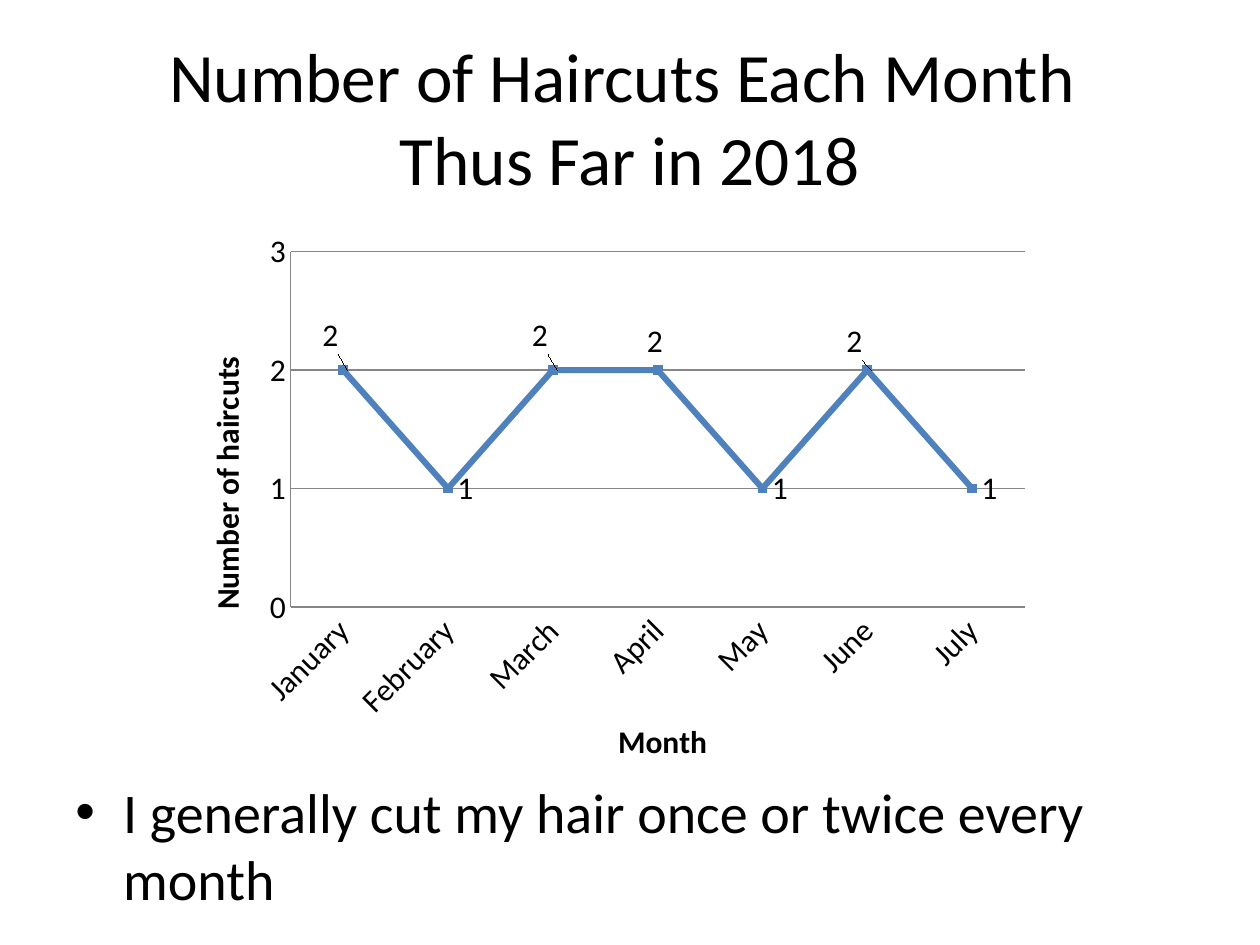
from pptx import Presentation
from pptx.chart.data import CategoryChartData
from pptx.dml.color import RGBColor
from pptx.enum.chart import XL_CHART_TYPE as ChartType, XL_LABEL_POSITION as LabelPos
from pptx.enum.chart import XL_MARKER_STYLE as Marker, XL_TICK_MARK as Tick
from pptx.enum.text import MSO_ANCHOR as Anchor, PP_ALIGN as Align
from pptx.oxml import parse_xml
from pptx.oxml.ns import nsdecls, qn
from pptx.util import Inches, Pt

FONT = "Calibri"
HAIRCUTS = {"January": 2, "February": 1, "March": 2, "April": 2,
            "May": 1, "June": 2, "July": 1}
LABEL_SHIFTS = {0: (-0.03, -0.06), 2: (-0.03, -0.06),
                3: (-0.02, -0.05), 5: (-0.03, -0.05)}


def color(value):
    """Turn a hex string into a colour."""
    return RGBColor.from_string(value)


def style_font(font, size, bold=False):
    """Give a font the typeface, size and weight of this slide."""
    font.name, font.size, font.bold = FONT, Pt(size), bold
    font.color.rgb = color("000000")


def add_text(page, box, text, size, align=Align.LEFT, anchor=Anchor.TOP, bullet=None):
    """Add a wrapped text box, optionally with a hanging bullet."""
    frame = page.shapes.add_textbox(*map(Inches, box)).text_frame
    frame.word_wrap, frame.vertical_anchor = True, anchor
    para = frame.paragraphs[0]
    para.text, para.alignment = text, align
    for span in para.runs:
        style_font(span.font, size)
    if bullet:
        props = para._p.get_or_add_pPr()
        props.set("marL", str(Inches(0.38)))
        props.set("indent", str(-Inches(0.38)))
        props.append(parse_xml(f'<a:buFont {nsdecls("a")} typeface="Arial"/>'))
        props.append(parse_xml(f'<a:buChar {nsdecls("a")} char="{bullet}"/>'))


def set_layout(parent, after, modes="", **values):
    """Place a chart part by fractions of the chart's size."""
    for old in parent.findall(qn("c:layout")):
        parent.remove(old)
    sizes = "".join(f'<c:{key} val="{value}"/>' for key, value in values.items())
    layout = parse_xml(f'<c:layout {nsdecls("c")}><c:manualLayout>{modes}{sizes}'
                       '</c:manualLayout></c:layout>')
    if after is None:
        parent.insert(0, layout)
    else:
        after.addnext(layout)


def style_axis(axis, title, left, top, rotation=0):
    """Format an axis and place its title."""
    axis.major_tick_mark = axis.minor_tick_mark = Tick.NONE
    axis.format.line.color.rgb = color("868686")
    style_font(axis.tick_labels.font, 18)
    frame = axis.axis_title.text_frame
    frame.text = title
    style_font(frame.paragraphs[0].runs[0].font, 18, bold=True)
    frame._txBody.find(qn("a:bodyPr")).set("rot", str(rotation * 60000))
    element = axis.axis_title._element
    set_layout(element, element.find(qn("c:tx")),
               '<c:xMode val="edge"/><c:yMode val="edge"/>', x=left, y=top)


def style_series(series):
    """Format the line, its markers and its value labels."""
    series.smooth = False
    blue = color("4F81BD")
    series.format.line.color.rgb, series.format.line.width = blue, Pt(3.5)
    series.marker.style, series.marker.size = Marker.SQUARE, 5
    series.marker.format.fill.solid()
    series.marker.format.fill.fore_color.rgb = blue
    series.marker.format.line.color.rgb = blue
    labels = series.data_labels
    labels.show_value, labels.position = True, LabelPos.RIGHT
    style_font(labels.font, 18)
    for index in LABEL_SHIFTS:
        series.points[index].data_label.position = LabelPos.RIGHT
    for label in series._element.iter(qn("c:dLbl")):
        mark = label.find(qn("c:idx"))
        left, top = LABEL_SHIFTS[int(mark.get("val"))]
        set_layout(label, mark, x=left, y=top)


def add_haircut_chart(page, box):
    """Add the line chart of haircuts by month."""
    data = CategoryChartData()
    data.categories = list(HAIRCUTS)
    data.add_series("Series 1", list(HAIRCUTS.values()))
    chart = page.shapes.add_chart(ChartType.LINE_MARKERS, *map(Inches, box), data).chart
    chart.has_legend = chart.has_title = False
    style_font(chart.font, 18)
    chart.plots[0].vary_by_categories = False
    style_axis(chart.category_axis, "Month", 0.42, 0.9)
    chart.category_axis.tick_labels.font._element.getparent().getparent().getparent().find(
        qn("a:bodyPr")).set("rot", str(-45 * 60000))
    values = chart.value_axis
    style_axis(values, "Number of haircuts", 0.01, 0.27, rotation=-90)
    values.minimum_scale, values.maximum_scale, values.major_unit = 0, 3, 1
    values.major_gridlines.format.line.color.rgb = color("868686")
    style_series(chart.plots[0].series[0])
    set_layout(chart._chartSpace.chart.plotArea, None,
               '<c:layoutTarget val="inner"/><c:xMode val="edge"/><c:yMode val="edge"/>',
               x=0.101, y=0.098, w=0.728, h=0.617)


def main():
    """Build the slide and save the deck."""
    deck = Presentation()
    deck.slide_width, deck.slide_height = Inches(10), Inches(7.5)
    page = deck.slides.add_slide(deck.slide_layouts[6])
    add_text(page, (0.5, 0.3, 9, 1.25),
             "Number of Haircuts Each Month \vThus Far in 2018", 39.6,
             align=Align.CENTER, anchor=Anchor.MIDDLE)
    add_haircut_chart(page, (1.5, 1.55, 8, 4.57))
    add_text(page, (0.5, 6.12, 9, 2.17),
             "I generally cut my hair once or twice every month", 32, bullet="•")
    deck.save("out.pptx")


if __name__ == "__main__":
    main()
